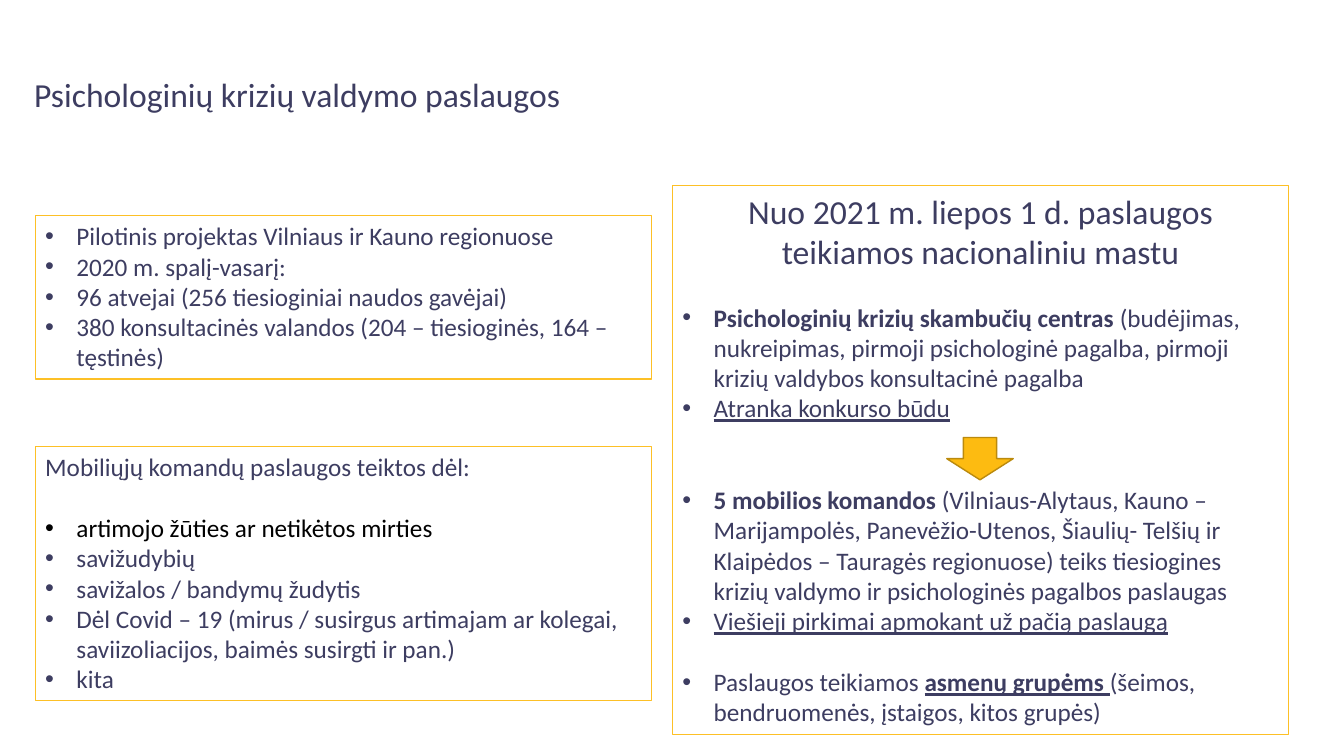
"""Build a slide on psychological crisis management services."""
from lxml import etree
from pptx import Presentation
from pptx.dml.color import RGBColor
from pptx.enum.shapes import MSO_SHAPE
from pptx.enum.text import MSO_ANCHOR, PP_ALIGN
from pptx.oxml.ns import qn
from pptx.util import Inches, Pt

RECTANGLE = MSO_SHAPE.RECTANGLE
DOWN_ARROW = MSO_SHAPE.DOWN_ARROW
TOP, MIDDLE = MSO_ANCHOR.TOP, MSO_ANCHOR.MIDDLE
LEFT, CENTER = PP_ALIGN.LEFT, PP_ALIGN.CENTER

INDIGO = RGBColor(0x3D, 0x3D, 0x61)
BLACK = RGBColor(0, 0, 0)
YELLOW = RGBColor(0xFD, 0xC0, 0x26)
AMBER = RGBColor(0xFD, 0xBB, 0x11)
DARK_AMBER = RGBColor(0xBB, 0x8A, 0x0D)

FONT = "Calibri"
LINE_GAP = 22
BULLET_INDENT = Inches(0.31)
BOX_WIDTH = 6.11
LEFT_COLUMN, RIGHT_COLUMN = 0.35, 6.67

PILOT_ITEMS = [
    "Pilotinis projektas Vilniaus ir Kauno regionuose",
    "2020 m. spalį-vasarį:",
    "96 atvejai (256 tiesioginiai naudos gavėjai)",
    "380 konsultacinės valandos (204 – tiesioginės, 164 – tęstinės)",
]
OTHER_REASONS = [
    "savižudybių",
    "savižalos / bandymų žudytis",
    "Dėl Covid – 19 (mirus / susirgus artimajam ar kolegai, "
    "saviizoliacijos, baimės susirgti ir pan.)",
    "kita",
]


def add_span(para, text, size=18, color=INDIGO, bold=False, underline=False):
    """Append formatted text to a paragraph."""
    span = para.add_run()
    span.text = text
    span.font.name = FONT
    span.font.size = Pt(size)
    span.font.color.rgb = color
    span.font.bold = bold
    span.font.underline = underline


def add_paragraph(box, bullet=False, before=0, align=LEFT):
    """Return the next paragraph of a box, bulleted if asked."""
    frame = box.text_frame
    para = frame.paragraphs[0]
    if para.runs:
        para = frame.add_paragraph()
    if bullet:
        properties = para._p.get_or_add_pPr()
        properties.set("marL", str(BULLET_INDENT))
        properties.set("indent", str(-BULLET_INDENT))
        etree.SubElement(properties, qn("a:buFont"), typeface="Arial")
        etree.SubElement(properties, qn("a:buChar"), char="•")
    para.alignment = align
    if before:
        para.space_before = Pt(before)
    return para


def add_bullets(box, items):
    """Add one plain bullet per item."""
    for item in items:
        add_span(add_paragraph(box, bullet=True), item)


def add_title(page, text):
    """Add the slide title."""
    box = page.shapes.add_textbox(
        Inches(0.24), Inches(0.47), Inches(12.95), Inches(0.97))
    box.text_frame.word_wrap = True
    box.text_frame.vertical_anchor = MIDDLE
    para = add_paragraph(box)
    para.line_spacing = 0.9
    add_span(para, text, size=24)


def add_box(page, left, top, height):
    """Add an outlined box for text."""
    box = page.shapes.add_shape(
        RECTANGLE, Inches(left), Inches(top), Inches(BOX_WIDTH), Inches(height))
    box.shadow.inherit = False
    box.fill.background()
    box.line.color.rgb = YELLOW
    box.line.width = Pt(0.75)
    box.text_frame.word_wrap = True
    box.text_frame.vertical_anchor = TOP
    return box


def add_arrow(page):
    """Add the arrow from the call centre to the mobile teams."""
    arrow = page.shapes.add_shape(
        DOWN_ARROW, Inches(9.39), Inches(4.34), Inches(0.66), Inches(0.42))
    arrow.shadow.inherit = False
    arrow.fill.solid()
    arrow.fill.fore_color.rgb = AMBER
    arrow.line.color.rgb = DARK_AMBER
    arrow.line.width = Pt(1)


def add_pilot(page):
    """Add the results of the pilot project."""
    add_bullets(add_box(page, LEFT_COLUMN, 2.14, 1.62), PILOT_ITEMS)


def add_reasons(page):
    """Add the reasons for calling mobile teams."""
    box = add_box(page, LEFT_COLUMN, 4.43, 2.52)
    add_span(add_paragraph(box), "Mobiliųjų komandų paslaugos teiktos dėl:")
    first = add_paragraph(box, bullet=True, before=LINE_GAP)
    add_span(first, "artimojo žūties ar netikėtos mirties", color=BLACK)
    add_bullets(box, OTHER_REASONS)


def add_national_services(page):
    """Add the services offered nationwide."""
    box = add_box(page, RIGHT_COLUMN, 1.84, 5.45)
    heading = add_paragraph(box, align=CENTER)
    add_span(heading, "Nuo 2021 m. liepos 1 d. paslaugos teikiamos "
             "nacionaliniu mastu", size=24)

    centre = add_paragraph(box, bullet=True, before=LINE_GAP)
    add_span(centre, "Psichologinių krizių skambučių centras ", bold=True)
    add_span(centre, "(budėjimas, nukreipimas, pirmoji psichologinė pagalba, "
             "pirmoji krizių valdybos konsultacinė pagalba")
    selection = add_paragraph(box, bullet=True)
    add_span(selection, "Atranka konkurso būdu", underline=True)

    teams = add_paragraph(box, bullet=True, before=2 * LINE_GAP)
    add_span(teams, "5 mobilios komandos ", bold=True)
    add_span(teams, "(Vilniaus-Alytaus, Kauno – Marijampolės, "
             "Panevėžio-Utenos, Šiaulių- Telšių ir Klaipėdos – Tauragės "
             "regionuose) teiks tiesiogines krizių valdymo ir "
             "psichologinės pagalbos paslaugas")
    purchase = add_paragraph(box, bullet=True)
    add_span(purchase, "Viešieji pirkimai apmokant už pačią paslaugą",
             underline=True)

    groups = add_paragraph(box, bullet=True, before=LINE_GAP)
    add_span(groups, "Paslaugos teikiamos ")
    add_span(groups, "asmenų grupėms ", bold=True, underline=True)
    add_span(groups, "(šeimos, bendruomenės, įstaigos, kitos grupės)")


def main():
    """Create and save the deck."""
    deck = Presentation()
    deck.slide_width = Inches(13.33)
    deck.slide_height = Inches(7.5)
    page = deck.slides.add_slide(deck.slide_layouts[6])
    add_title(page, "Psichologinių krizių valdymo paslaugos")
    add_pilot(page)
    add_reasons(page)
    add_national_services(page)
    add_arrow(page)
    deck.save("out.pptx")


if __name__ == "__main__":
    main()
